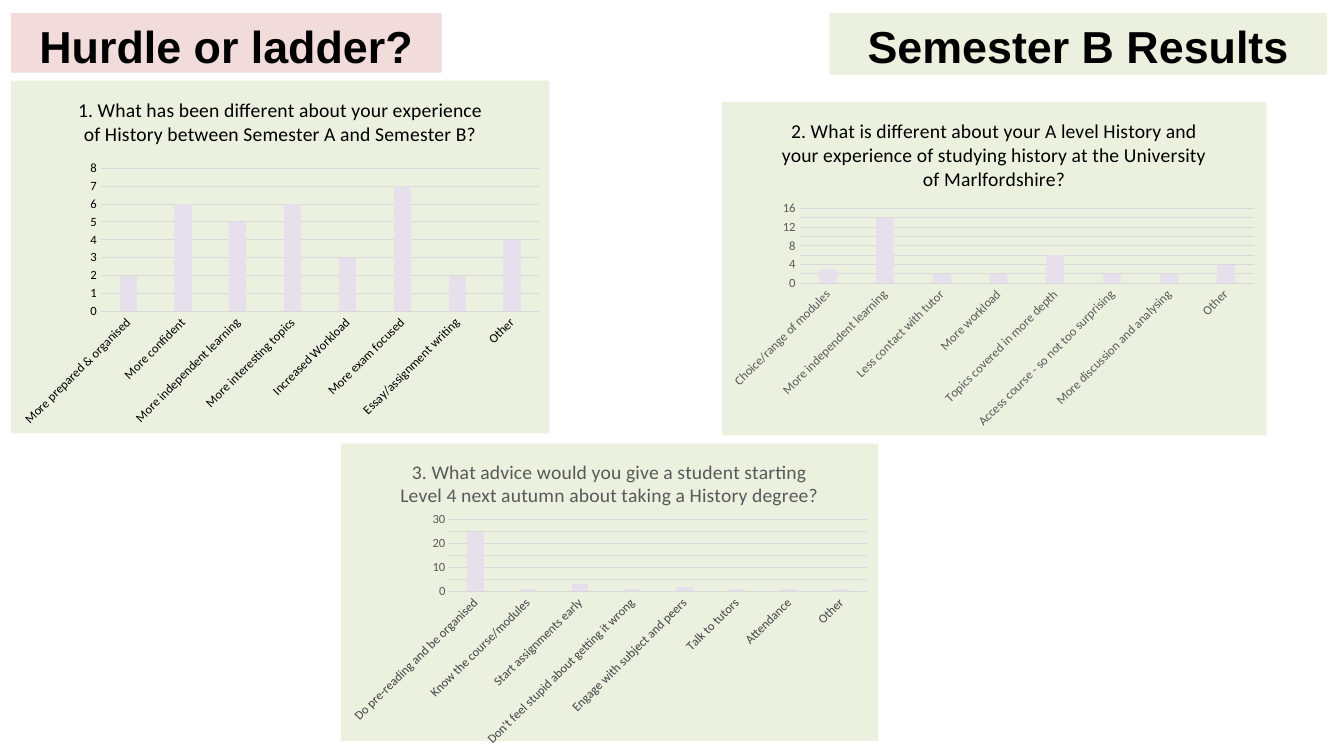
from lxml import etree
from pptx import Presentation
from pptx.chart.data import CategoryChartData
from pptx.dml.color import RGBColor
from pptx.enum.chart import XL_CHART_TYPE, XL_TICK_MARK
from pptx.enum.shapes import MSO_SHAPE
from pptx.enum.text import MSO_ANCHOR, MSO_AUTO_SIZE, PP_ALIGN
from pptx.oxml import parse_xml
from pptx.oxml.ns import nsdecls, qn
from pptx.util import Inches, Pt

COLUMNS = XL_CHART_TYPE.COLUMN_CLUSTERED
NO_TICK = XL_TICK_MARK.NONE
RECTANGLE = MSO_SHAPE.RECTANGLE
TOP = MSO_ANCHOR.TOP
NO_AUTOFIT = MSO_AUTO_SIZE.NONE
CENTER = PP_ALIGN.CENTER

THEME = {
    "heading_font": "Arial", "chart_font": "Calibri",
    "heading_size": 32, "question_size": 14, "label_size": 9,
    "black": "000000", "grey": "595959", "grid": "D9D9D9",
    "pink": "F2DCDB", "green": "EBF1DE", "lilac": "E6E0EC",
}

# Boxes are left, top, width, height in inches; a plot of None is laid out automatically
TITLE = ("Hurdle or ladder?", (0.11, 0.13, 4.27, 0.59), "pink")
SUBTITLE = ("Semester B Results", (8.23, 0.13, 4.93, 0.61), "green")

SURVEYS = [
    {
        "question": "1. What has been different about your experience of History "
                    "between Semester A and Semester B?",
        "box": (0.11, 0.8, 5.34, 3.5), "plot": (1.0, 1.67, 4.35, 1.42),
        "question_color": "black", "label_color": "black", "scale": (8, 1),
        "answers": {
            "More prepared & organised": 2, "More confident": 6,
            "More independent learning": 5, "More interesting topics": 6,
            "Increased Workload": 3, "More exam focused": 7,
            "Essay/assignment writing": 2, "Other": 4,
        },
    },
    {
        "question": "2. What is different about your A level History and your experience "
                    "of studying history at the University of Marlfordshire?",
        "box": (7.16, 1.01, 5.4, 3.31), "plot": (7.93, 2.07, 4.51, 0.74),
        "question_color": "black", "label_color": "grey", "scale": (16, 2),
        "answers": {
            "Choice/range of modules": 3, "More independent learning": 14,
            "Less contact with tutor": 2, "More workload": 2,
            "Topics covered in more depth": 6,
            "Access course - so not too surprising": 2,
            "More discussion and analysing": 2, "Other": 4,
        },
    },
    {
        "question": "3. What advice would you give a student starting Level 4 next autumn "
                    "about taking a History degree?",
        "box": (3.38, 4.4, 5.33, 3.0), "plot": None,
        "question_color": "grey", "label_color": "grey", "scale": (30, 5),
        "answers": {
            "Do pre-reading and be organised": 25, "Know the course/modules": 1,
            "Start assignments early": 3,
            "Don't feel stupid about getting it wrong": 1,
            "Engage with subject and peers": 2, "Talk to tutors": 1,
            "Attendance": 1, "Other": 1,
        },
    },
]


def color(name):
    return RGBColor.from_string(THEME[name])


def apply(target, values):
    for name, value in values.items():
        setattr(target, name, value)


def format_font(font, family, size, color_name, bold=False):
    apply(font, {"name": THEME[family], "size": Pt(THEME[size]), "bold": bold})
    font.color.rgb = color(color_name)


def fill_banner(banner, text, box, fill):
    apply(banner, dict(zip(("left", "top", "width", "height"), map(Inches, box))))
    banner.fill.solid()
    banner.fill.fore_color.rgb = color(fill)
    banner.line.fill.background()
    frame = banner.text_frame
    apply(frame, {
        "text": text, "word_wrap": True, "auto_size": NO_AUTOFIT, "vertical_anchor": TOP,
        "margin_left": Inches(0.11), "margin_right": Inches(0.11),
        "margin_top": Inches(0.06), "margin_bottom": Inches(0.06),
    })
    paragraph = frame.paragraphs[0]
    apply(paragraph, {"alignment": CENTER, "line_spacing": 1.0,
                      "space_before": Pt(0.9), "space_after": Pt(0.9)})
    format_font(paragraph.runs[0].font, "heading_font", "heading_size", "black", True)


def fill_chart_area(chart):
    chart_part = chart.element.find(qn("c:chart"))
    chart_part.addnext(parse_xml(
        f'<c:spPr {nsdecls("c", "a")}><a:solidFill><a:srgbClr val="{THEME["green"]}"/>'
        '</a:solidFill><a:ln><a:noFill/></a:ln></c:spPr>'))


def place_plot(chart, box, plot):
    """Pin the inner plot area, given in slide inches, within the chart's box."""
    plot_area = chart.element.find(qn("c:chart")).find(qn("c:plotArea"))
    for old_layout in plot_area.findall(qn("c:layout")):
        plot_area.remove(old_layout)
    layout = etree.Element(qn("c:layout"))
    manual = etree.SubElement(layout, qn("c:manualLayout"))
    left, top, width, height = box
    settings = {
        "layoutTarget": "inner", "xMode": "edge", "yMode": "edge",
        "x": (plot[0] - left) / width, "y": (plot[1] - top) / height,
        "w": plot[2] / width, "h": plot[3] / height,
    }
    for tag, value in settings.items():
        etree.SubElement(manual, qn(f"c:{tag}")).set("val", str(value))
    plot_area.insert(0, layout)


def format_axes(chart, label_color, scale):
    categories, values = chart.category_axis, chart.value_axis
    for axis in (categories, values):
        apply(axis, {"major_tick_mark": NO_TICK, "minor_tick_mark": NO_TICK})
        format_font(axis.tick_labels.font, "chart_font", "label_size", label_color)
    label_body = categories._element.find(qn("c:txPr")).find(qn("a:bodyPr"))
    label_body.set("rot", "-2700000")
    maximum, step = scale
    apply(values, {"minimum_scale": 0, "maximum_scale": maximum, "major_unit": step,
                   "has_major_gridlines": True})
    values.format.line.fill.background()
    for line in (categories.format.line, values.major_gridlines.format.line):
        line.color.rgb = color("grid")
        line.width = Pt(0.75)


def add_survey(slide, survey):
    data = CategoryChartData()
    data.categories = survey["answers"].keys()
    data.add_series("Series 1", survey["answers"].values())
    chart = slide.shapes.add_chart(COLUMNS, *map(Inches, survey["box"]), data).chart
    apply(chart, {"has_legend": False, "has_title": True})
    fill_chart_area(chart)
    format_font(chart.font, "chart_font", "label_size", survey["label_color"])

    question = chart.chart_title.text_frame
    question.text = survey["question"]
    format_font(question.paragraphs[0].runs[0].font, "chart_font", "question_size",
                survey["question_color"])
    chart.chart_title.include_in_layout = False

    columns = chart.plots[0]
    apply(columns, {"gap_width": 219, "overlap": -27, "vary_by_categories": False})
    columns.series[0].format.fill.solid()
    columns.series[0].format.fill.fore_color.rgb = color("lilac")
    format_axes(chart, survey["label_color"], survey["scale"])
    if survey["plot"]:
        place_plot(chart, survey["box"], survey["plot"])


def main():
    deck = Presentation()
    apply(deck, {"slide_width": Inches(13.33), "slide_height": Inches(7.5)})
    slide = deck.slides.add_slide(deck.slide_layouts[5])
    fill_banner(slide.shapes.title, *TITLE)
    subtitle = slide.shapes.add_shape(RECTANGLE, *map(Inches, SUBTITLE[1]))
    subtitle.shadow.inherit = False
    fill_banner(subtitle, *SUBTITLE)
    for survey in SURVEYS:
        add_survey(slide, survey)
    deck.save("out.pptx")


if __name__ == "__main__":
    main()
